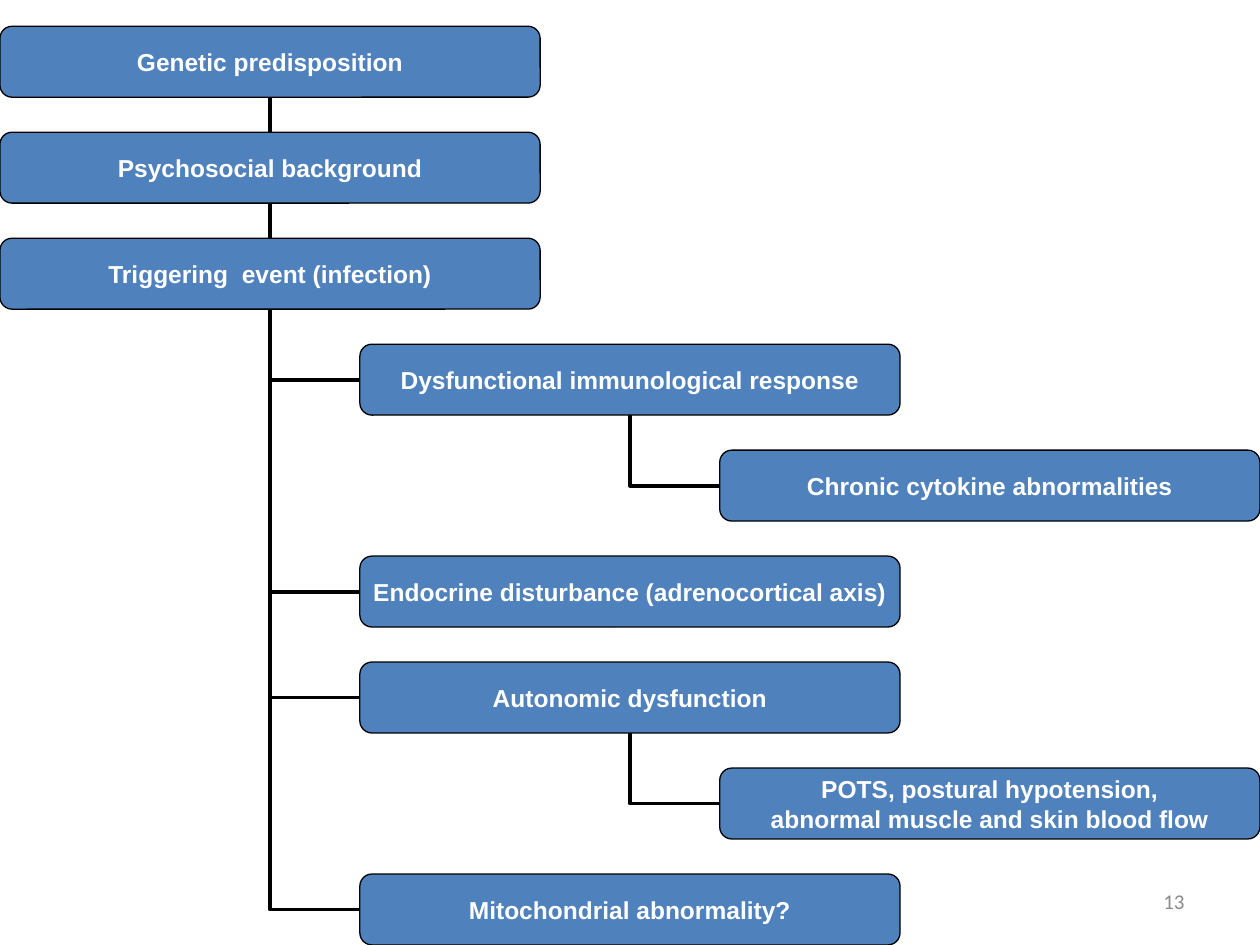
from dataclasses import dataclass
from typing import Optional

from lxml import etree
from pptx import Presentation
from pptx.dml.color import RGBColor
from pptx.enum.shapes import MSO_CONNECTOR, MSO_SHAPE
from pptx.enum.text import MSO_ANCHOR, PP_ALIGN
from pptx.oxml.ns import qn
from pptx.util import Cm, Pt

ROUNDED = MSO_SHAPE.ROUNDED_RECTANGLE
STRAIGHT, ELBOW = MSO_CONNECTOR.STRAIGHT, MSO_CONNECTOR.ELBOW
MIDDLE = MSO_ANCHOR.MIDDLE
CENTER, RIGHT = PP_ALIGN.CENTER, PP_ALIGN.RIGHT
LEFT_SIDE, BOTTOM_SIDE, TOP_SIDE = 1, 2, 0

COLORS = {"box": "4F81BD", "line": "000000", "label": "FFFFFF", "number": "8C8C8C"}
SLIDE_WIDTH, SLIDE_HEIGHT = 25.4, 19.05
BOX_WIDTH, BOX_HEIGHT = 10.89, 1.43
FIRST_TOP = 0.53
INDENT = (SLIDE_WIDTH - BOX_WIDTH) / 2


@dataclass
class Factor:
    text: str
    level: int
    parent: Optional[int] = None


FACTORS = [
    Factor("Genetic predisposition", 0),
    Factor("Psychosocial background", 0, 0),
    Factor("Triggering  event (infection)", 0, 1),
    Factor("Dysfunctional immunological response", 1, 2),
    Factor("Chronic cytokine abnormalities", 2, 3),
    Factor("Endocrine disturbance (adrenocortical axis)", 1, 2),
    Factor("Autonomic dysfunction", 1, 2),
    Factor("POTS, postural hypotension,\nabnormal muscle and skin blood flow", 2, 6),
    Factor("Mitochondrial abnormality?", 1, 2),
]
ROW_STEP = (SLIDE_HEIGHT - BOX_HEIGHT - FIRST_TOP) / (len(FACTORS) - 1)


def color(name: str) -> RGBColor:
    return RGBColor.from_string(COLORS[name])


def write_text(shape, text: str, *, font: str, size: float, fill: str,
               align, bold: bool = False, wrap: bool = True, inset=None) -> None:
    frame = shape.text_frame
    frame.text = text
    frame.word_wrap = wrap
    frame.vertical_anchor = MIDDLE
    if inset is not None:
        frame.margin_left = frame.margin_right = inset
        frame.margin_top = frame.margin_bottom = inset
    for paragraph in frame.paragraphs:
        paragraph.alignment = align
        for run in paragraph.runs:
            run.font.name = font
            run.font.size = Pt(size)
            run.font.bold = bold
            run.font.color.rgb = color(fill)


def add_box(slide, factor: Factor, row: int):
    shape = slide.shapes.add_shape(
        ROUNDED, Cm(factor.level * INDENT), Cm(FIRST_TOP + row * ROW_STEP),
        Cm(BOX_WIDTH), Cm(BOX_HEIGHT))
    shape.shadow.inherit = False
    shape.adjustments[0] = 0.17
    shape.fill.solid()
    shape.fill.fore_color.rgb = color("box")
    shape.line.color.rgb = color("line")
    shape.line.width = Pt(0.75)
    write_text(shape, factor.text, font="Arial", size=14, fill="label",
               align=CENTER, bold=True, wrap=False, inset=Cm(0))
    return shape


def link_boxes(slide, child, parent, same_level: bool) -> None:
    connector = slide.shapes.add_connector(
        STRAIGHT if same_level else ELBOW,
        child.left, child.top + child.height // 2,
        parent.left + parent.width // 2, parent.top + parent.height)
    connector.begin_connect(child, TOP_SIDE if same_level else LEFT_SIDE)
    connector.end_connect(parent, BOTTOM_SIDE)
    connector.line.color.rgb = color("line")
    connector.line.width = Pt(2.25)
    properties = connector._element.spPr
    if not same_level:
        properties.find(qn("a:prstGeom")).set("prst", "bentConnector2")
    etree.SubElement(properties, qn("a:effectLst"))
    slide.shapes._spTree.insert(2, connector._element)


def main() -> None:
    presentation = Presentation()
    presentation.slide_width = Cm(SLIDE_WIDTH)
    presentation.slide_height = Cm(SLIDE_HEIGHT)
    slide = presentation.slides.add_slide(presentation.slide_layouts[6])

    number = slide.shapes.add_textbox(Cm(18.2), Cm(17.66), Cm(5.93), Cm(1.01))
    write_text(number, "13", font="Calibri", size=12, fill="number", align=RIGHT)

    boxes = [add_box(slide, factor, row) for row, factor in enumerate(FACTORS)]
    for factor, box in zip(FACTORS, boxes):
        if factor.parent is not None:
            same_level = factor.level == FACTORS[factor.parent].level
            link_boxes(slide, box, boxes[factor.parent], same_level)

    presentation.save("out.pptx")


if __name__ == "__main__":
    main()
